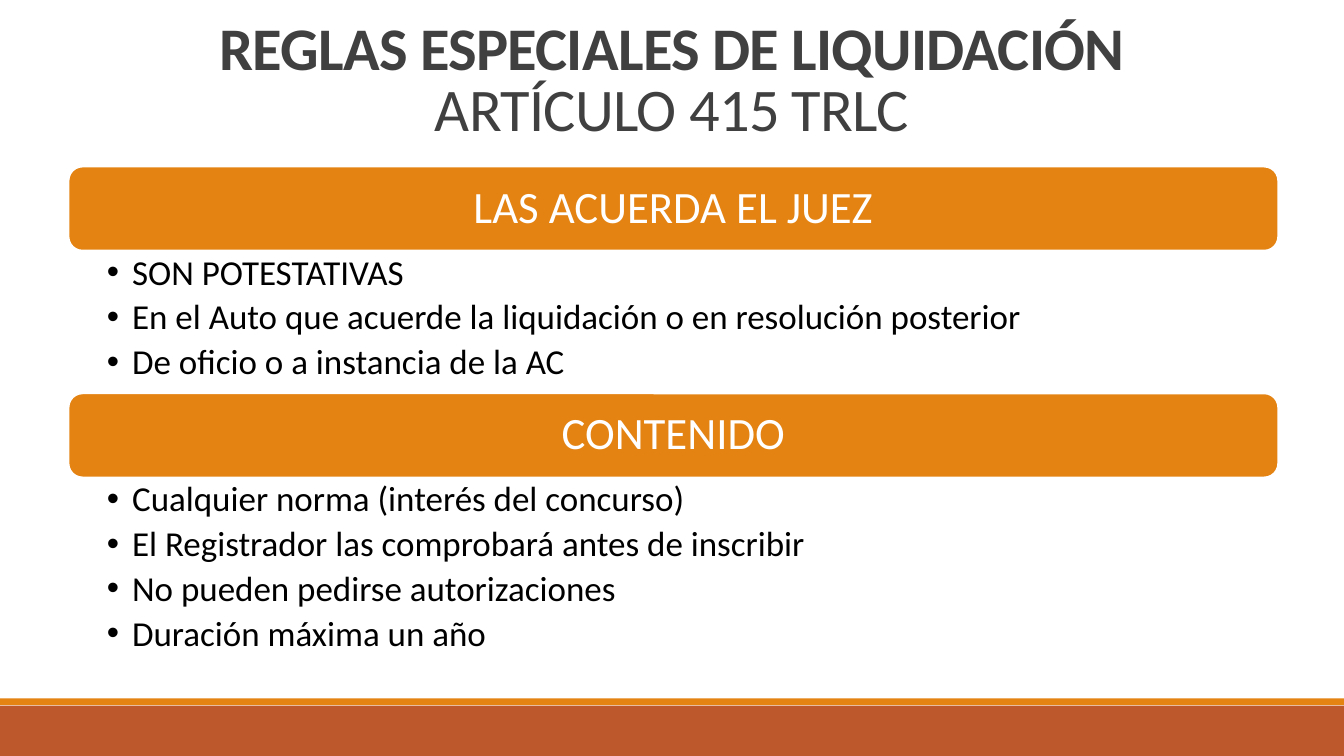
from lxml.etree import SubElement
from pptx import Presentation
from pptx.dml.color import RGBColor
from pptx.enum.shapes import MSO_SHAPE as SHAPE
from pptx.enum.text import MSO_ANCHOR as ANCHOR, MSO_AUTO_SIZE as AUTOSIZE, PP_ALIGN as ALIGN
from pptx.oxml.ns import qn
from pptx.util import Pt

FONT = "Calibri"
ORANGE, RUST, WHITE, GREY, BLACK = "E48312", "BD582C", "FFFFFF", "404040", "000000"
WIDTH, HEIGHT = 960, 540
LEFT, BLOCK_W, HEADER_H = 49, 864, 60

# Each section: top, height of its list, header, bullets
SECTIONS = [
    (119, 101.5, "LAS ACUERDA EL JUEZ", [
        "SON POTESTATIVAS",
        "En el Auto que acuerde la liquidación o en resolución posterior",
        "De oficio o a instancia de la AC",
    ]),
    (281, 135, "CONTENIDO", [
        "Cualquier norma (interés del concurso)",
        "El Registrador las comprobará antes de inscribir",
        "No pueden pedirse autorizaciones",
        "Duración máxima un año",
    ]),
]


def color(hex_str):
    return RGBColor.from_string(hex_str)


def add_run(p, text, size, hex_str, bold=False):
    r = p.add_run()
    r.text = text
    r.font.name, r.font.size, r.font.bold = FONT, Pt(size), bold
    r.font.color.rgb = color(hex_str)
    return r


def set_frame(tf, anchor, left, top, right, bottom):
    tf.word_wrap = True
    tf.auto_size = AUTOSIZE.NONE
    tf.vertical_anchor = anchor
    tf.margin_left, tf.margin_top = Pt(left), Pt(top)
    tf.margin_right, tf.margin_bottom = Pt(right), Pt(bottom)


def add_box(s, kind, x, y, w, h, fill, line=None):
    sp = s.shapes.add_shape(kind, Pt(x), Pt(y), Pt(w), Pt(h))
    sp.shadow.inherit = False
    sp.fill.solid()
    sp.fill.fore_color.rgb = color(fill)
    if line:
        sp.line.color.rgb = color(line)
        sp.line.width = Pt(1.25)
    else:
        sp.line.fill.background()
    return sp


def set_title(s):
    sp = s.shapes.title
    sp.left, sp.top, sp.width, sp.height = Pt(48), Pt(21.6), Pt(864), Pt(85)
    tf = sp.text_frame
    set_frame(tf, ANCHOR.BOTTOM, 7.2, 3.6, 7.2, 3.6)
    p = tf.paragraphs[0]
    p.alignment, p.line_spacing = ALIGN.CENTER, 0.85
    first = add_run(p, "REGLAS ESPECIALES DE LIQUIDACIÓN", 43.2, GREY, bold=True)
    p.add_line_break()
    second = add_run(p, "ARTÍCULO 415 TRLC", 43.2, GREY)
    for r in (first, second):
        r.font._element.set("spc", "-50")


def add_header(s, y, text):
    sp = add_box(s, SHAPE.ROUNDED_RECTANGLE, LEFT, y, BLOCK_W, HEADER_H, ORANGE, WHITE)
    tf = sp.text_frame
    set_frame(tf, ANCHOR.MIDDLE, 9.6, 9.6, 9.6, 9.6)
    p = tf.paragraphs[0]
    p.alignment, p.line_spacing = ALIGN.CENTER, 0.9
    add_run(p, text, 32, WHITE)


def add_bullets(s, y, h, items):
    sp = s.shapes.add_textbox(Pt(LEFT), Pt(y), Pt(BLOCK_W), Pt(h))
    tf = sp.text_frame
    set_frame(tf, ANCHOR.TOP, 27.4, 3, 18, 3)
    for i, item in enumerate(items):
        p = tf.add_paragraph() if i else tf.paragraphs[0]
        p.level, p.line_spacing, p.space_after = 1, 0.9, Pt(5)
        pPr = p._p.get_or_add_pPr()
        pPr.set("marL", str(Pt(18)))
        pPr.set("indent", str(-Pt(18)))
        SubElement(pPr, qn("a:buFont"), typeface="Arial")
        SubElement(pPr, qn("a:buChar"), char="•")
        add_run(p, item, 25, BLACK)


def main():
    prs = Presentation()
    prs.slide_width, prs.slide_height = Pt(WIDTH), Pt(HEIGHT)
    s = prs.slides.add_slide(prs.slide_layouts[5])

    # Footer bands
    add_box(s, SHAPE.RECTANGLE, 0, 504, WIDTH, 36, RUST)
    add_box(s, SHAPE.RECTANGLE, 0, 498.8, WIDTH, 5, ORANGE)

    # Title and sections
    set_title(s)
    for y, list_h, header, items in SECTIONS:
        add_header(s, y, header)
        add_bullets(s, y + HEADER_H, list_h, items)

    prs.save("out.pptx")


if __name__ == "__main__":
    main()
